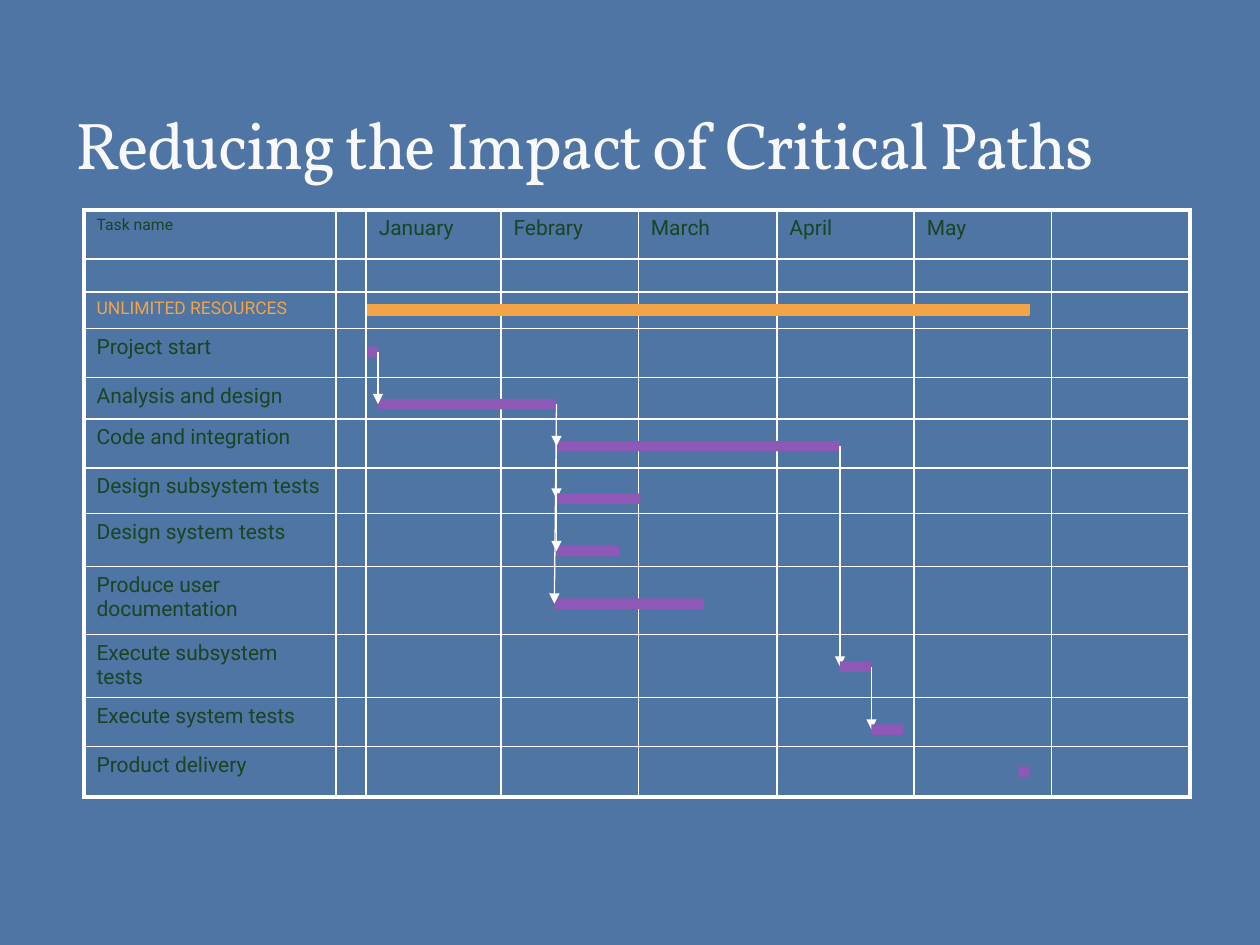
from pptx import Presentation
from pptx.dml.color import RGBColor
from pptx.enum.shapes import MSO_CONNECTOR, MSO_SHAPE
from pptx.enum.text import MSO_ANCHOR
from pptx.oxml.ns import qn
from pptx.util import Inches, Pt
from lxml import etree

STRAIGHT = MSO_CONNECTOR.STRAIGHT
RECTANGLE = MSO_SHAPE.RECTANGLE
BOTTOM = MSO_ANCHOR.BOTTOM
LEFT_SIDE, RIGHT_SIDE = 1, 3
GRID = 1 / 12  # bars sit on a grid of twelfths of an inch
COLORS = {
    "background": "4E75A3", "title": "F9F9F9", "text": "1A4422",
    "summary": "F3A447", "task": "8E58B6", "line": "FFFFFF",
}


def color(name):
    return RGBColor.from_string(COLORS[name])


def add_border(cell, side, width):
    border = etree.SubElement(cell._tc.get_or_add_tcPr(), qn(f"a:ln{side}"), w=str(Pt(width)))
    fill = etree.SubElement(border, qn("a:solidFill"))
    etree.SubElement(fill, qn("a:srgbClr"), val=COLORS["line"])


presentation = Presentation()
presentation.slide_width = Inches(10)
presentation.slide_height = Inches(7.5)
slide = presentation.slides.add_slide(presentation.slide_layouts[6])
slide.background.fill.solid()
slide.background.fill.fore_color.rgb = color("background")

# Title
title = slide.shapes.add_textbox(Inches(0.5), Inches(0.17), Inches(9), Inches(1.33))
title.text_frame.word_wrap = True
title.text_frame.vertical_anchor = BOTTOM
run = title.text_frame.paragraphs[0].add_run()
run.text = "Reducing the Impact of Critical Paths"
run.font.name = "Vollkorn"
run.font.size = Pt(37.8)
run.font.color.rgb = color("title")
run.font._element.set("spc", "-100")

# Calendar table
months = ["January", "Febrary", "March", "April", "May"]
tasks = [
    "Project start", "Analysis and design", "Code and integration",
    "Design subsystem tests", "Design system tests", "Produce user documentation",
    "Execute subsystem tests", "Execute system tests", "Product delivery",
]
column_widths = [2, 0.24, 1.07, 1.09, 1.1, 1.09, 1.09, 1.1]
row_heights = [0.39, 0.26, 0.29, 0.39, 0.33, 0.39, 0.36, 0.42, 0.54, 0.39, 0.39, 0.4]
last_row, last_column = len(row_heights) - 1, len(column_widths) - 1

# Cell position: text, size, colour
entries = {(0, 0): ("Task name", 9, "text"),
           (2, 0): ("UNLIMITED RESOURCES", 10, "summary")}
for column, month in enumerate(months, 2):
    entries[0, column] = (month, 12, "text")
for row, task in enumerate(tasks, 3):
    entries[row, 0] = (task, 12, "text")

frame = slide.shapes.add_table(
    len(row_heights), len(column_widths), Inches(8 * GRID), Inches(20 * GRID),
    Inches(sum(column_widths)), Inches(sum(row_heights)))
table = frame.table
table.first_row = False
table.horz_banding = False
for column, width in enumerate(column_widths):
    table.columns[column].width = Inches(width)

for row, height in enumerate(row_heights):
    table.rows[row].height = Inches(height)
    for column in range(len(column_widths)):
        cell = table.cell(row, column)
        outer_sides = {"L": column == 0, "R": column == last_column,
                       "T": row == 0, "B": row == last_row}
        for side, is_outer in outer_sides.items():
            add_border(cell, side, 2.25 if is_outer else 1)
        cell.fill.background()
        paragraph = cell.text_frame.paragraphs[0]
        if (row, column) in entries:
            text, size, color_name = entries[row, column]
            spacing = etree.SubElement(paragraph._p.get_or_add_pPr(), qn("a:spcBef"))
            etree.SubElement(spacing, qn("a:spcPct"), val="20000")
            run = paragraph.add_run()
            run.text = text
            run.font.name = "Roboto"
            run.font.size = Pt(size)
            run.font.color.rgb = color(color_name)
        else:
            # A small empty line keeps the short rows at their height
            etree.SubElement(paragraph._p, qn("a:endParaRPr"), sz="900")

# Bars: left, top, width in grid steps; each is one step high
bar_places = {
    "Unlimited resources": (35, 29, 63),
    "Project start": (35, 33, 1),
    "Analysis and design": (36, 38, 17),
    "Code and integration": (53, 42, 27),
    "Design subsystem tests": (53, 47, 8),
    "Design system tests": (53, 52, 6),
    "Produce user documentation": (52.8, 57, 14.25),
    "Execute subsystem tests": (80, 63, 3),
    "Execute system tests": (83, 69, 3),
    "Product delivery": (97, 73, 1),
}
bars = {}
for task, (left, top, width) in bar_places.items():
    bar = slide.shapes.add_shape(
        RECTANGLE, Inches(left * GRID), Inches(top * GRID), Inches(width * GRID), Inches(GRID))
    bar.shadow.inherit = False
    bar.fill.solid()
    if task == "Unlimited resources":
        bar.fill.fore_color.rgb = color("summary")
        bar.line.color.rgb = color("summary")
        bar.line.width = Pt(0.75)
    else:
        bar.fill.fore_color.rgb = color("task")
        bar.line.fill.background()
    bars[task] = bar

# Dependencies: from, to, whether the target bar lies over the arrowhead
dependencies = [
    ("Project start", "Analysis and design", False),
    ("Analysis and design", "Code and integration", False),
    ("Analysis and design", "Design subsystem tests", True),
    ("Analysis and design", "Design system tests", False),
    ("Analysis and design", "Produce user documentation", False),
    ("Code and integration", "Execute subsystem tests", True),
    ("Execute subsystem tests", "Execute system tests", True),
]
for source, target, bar_on_top in dependencies:
    arrow = slide.shapes.add_connector(STRAIGHT, 0, 0, 0, 0)
    arrow.begin_connect(bars[source], RIGHT_SIDE)
    arrow.end_connect(bars[target], LEFT_SIDE)
    arrow.line.color.rgb = color("line")
    arrow.line.width = Pt(0.75)
    etree.SubElement(arrow.line._get_or_add_ln(), qn("a:tailEnd"), type="triangle")
    etree.SubElement(arrow._element.spPr, qn("a:effectLst"))
    if bar_on_top:
        slide.shapes._spTree.append(bars[target]._element)

presentation.save("out.pptx")
